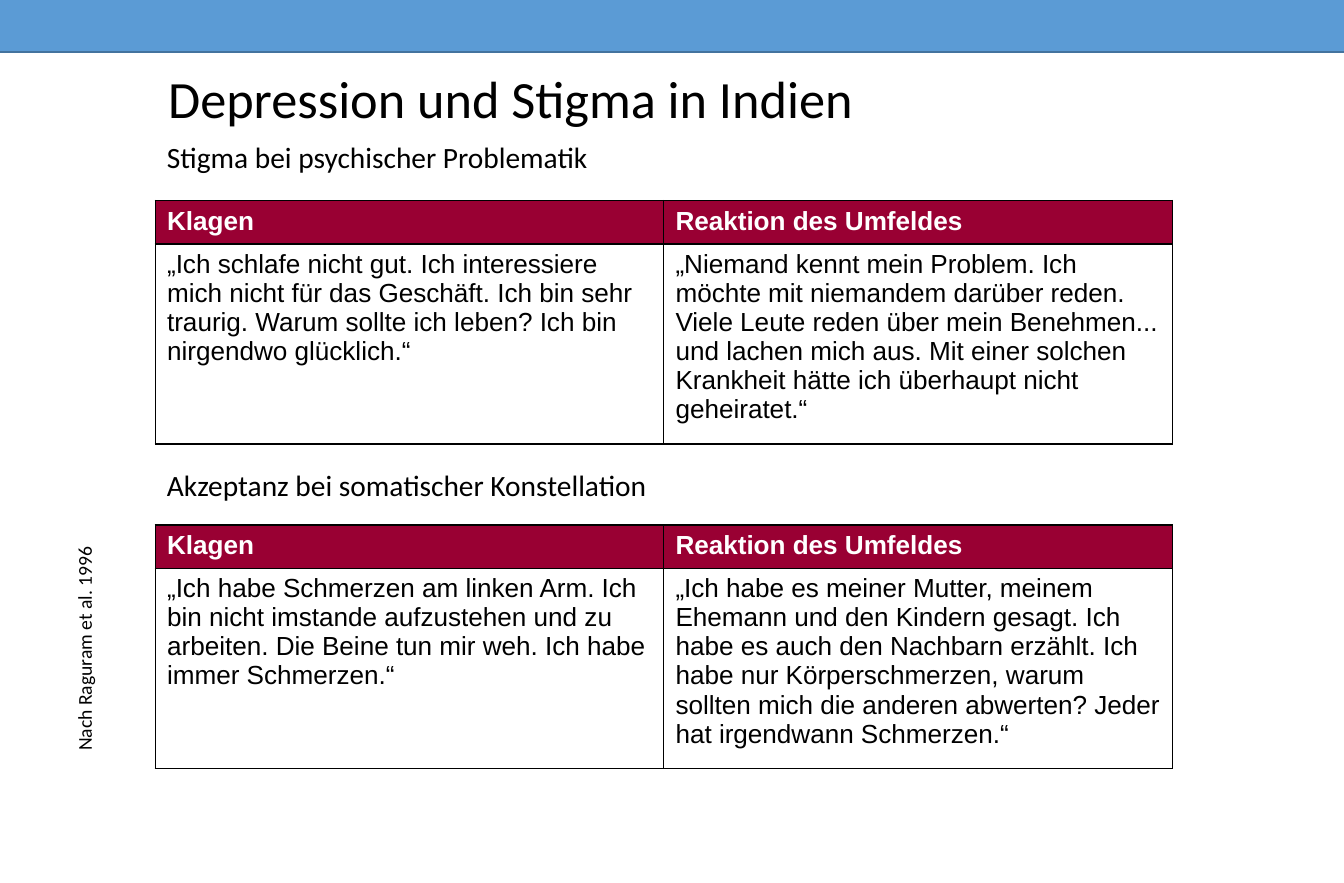
from lxml.etree import SubElement
from pptx import Presentation
from pptx.dml.color import RGBColor
from pptx.enum.shapes import MSO_SHAPE
from pptx.enum.text import MSO_ANCHOR
from pptx.oxml.ns import qn
from pptx.util import Inches, Pt

SLIDE_WIDTH = Inches(11.42)
SLIDE_HEIGHT = Inches(7.5)
BLACK = RGBColor(0x00, 0x00, 0x00)
WHITE = RGBColor(0xFF, 0xFF, 0xFF)
BAND_BLUE = RGBColor(0x5B, 0x9B, 0xD5)
BAND_EDGE = RGBColor(0x43, 0x73, 0x9E)
HEADER_RED = RGBColor(0x99, 0x00, 0x33)

CONTENT_LEFT = 11.56
TABLE_WIDTH = 75.66
HEADING_WIDTH = 67.34
HEADING_HEIGHT = 7.33
ROW_HEIGHTS = (4.6, 21.1)
HEADERS = ("Klagen", "Reaktion des Umfeldes")

SECTIONS = (
    (
        "Stigma bei psychischer Problematik", 15.07, 22.72,
        (
            "„Ich schlafe nicht gut. Ich interessiere mich nicht für das Geschäft. "
            "Ich bin sehr traurig. Warum sollte ich leben? Ich bin nirgendwo glücklich.“",
            "„Niemand kennt mein Problem. Ich möchte mit niemandem darüber reden. "
            "Viele Leute reden über mein Benehmen... und lachen mich aus. Mit einer "
            "solchen Krankheit hätte ich überhaupt nicht geheiratet.“",
        ),
    ),
    (
        "Akzeptanz bei somatischer Konstellation", 52.27, 59.47,
        (
            "„Ich habe Schmerzen am linken Arm. Ich bin nicht imstande aufzustehen "
            "und zu arbeiten. Die Beine tun mir weh. Ich habe immer Schmerzen.“",
            "„Ich habe es meiner Mutter, meinem Ehemann und den Kindern gesagt. Ich "
            "habe es auch den Nachbarn erzählt. Ich habe nur Körperschmerzen, warum "
            "sollten mich die anderen abwerten? Jeder hat irgendwann Schmerzen.“",
        ),
    ),
)


def across(percent):
    return round(SLIDE_WIDTH * percent / 100)


def down(percent):
    return round(SLIDE_HEIGHT * percent / 100)


def area(left, top, width, height):
    return across(left), down(top), across(width), down(height)


def format_text(text_frame, font_name, size, color, bold=False):
    for paragraph in text_frame.paragraphs:
        for run in paragraph.runs:
            run.font.name = font_name
            run.font.size = Pt(size)
            run.font.color.rgb = color
            run.font.bold = bold


def add_band(slide):
    band = slide.shapes.add_shape(
        MSO_SHAPE.RECTANGLE, *area(-3.15, -1.87, 107.62, 7.73)
    )
    band.shadow.inherit = False
    band.fill.solid()
    band.fill.fore_color.rgb = BAND_BLUE
    band.line.color.rgb = BAND_EDGE
    band.line.width = Pt(1)


def add_label(slide, text, position, size):
    label = slide.shapes.add_textbox(*position)
    label.text_frame.word_wrap = True
    label.text_frame.text = text
    format_text(label.text_frame, "Calibri", size, BLACK)
    return label


def add_borders(cell):
    properties = cell._tc.get_or_add_tcPr()
    for side in ("a:lnL", "a:lnR", "a:lnT", "a:lnB"):
        line = SubElement(properties, qn(side), w=str(Pt(1)))
        fill = SubElement(line, qn("a:solidFill"))
        SubElement(fill, qn("a:srgbClr"), val=str(BLACK))


def fill_cell(cell, text, background, color, bold):
    add_borders(cell)
    cell.fill.solid()
    cell.fill.fore_color.rgb = background
    cell.text_frame.text = text
    format_text(cell.text_frame, "Arial", 16, color, bold)


def add_statement_table(slide, top, statements):
    position = area(CONTENT_LEFT, top, TABLE_WIDTH, sum(ROW_HEIGHTS))
    table = slide.shapes.add_table(2, len(HEADERS), *position).table
    table.horz_banding = False
    for row, height in zip(table.rows, ROW_HEIGHTS):
        row.height = down(height)
    for column, (header, statement) in enumerate(zip(HEADERS, statements)):
        fill_cell(table.cell(0, column), header, HEADER_RED, WHITE, True)
        fill_cell(table.cell(1, column), statement, WHITE, BLACK, False)


def main():
    presentation = Presentation()
    presentation.slide_width = SLIDE_WIDTH
    presentation.slide_height = SLIDE_HEIGHT
    slide = presentation.slides.add_slide(presentation.slide_layouts[6])

    add_band(slide)
    title = add_label(
        slide, "Depression und Stigma in Indien", area(11.65, 6.67, 84.76, 9.73), 32
    )
    title.text_frame.vertical_anchor = MSO_ANCHOR.MIDDLE
    title.text_frame.paragraphs[0].line_spacing = 0.9

    for heading, heading_top, table_top, statements in SECTIONS:
        position = area(CONTENT_LEFT, heading_top, HEADING_WIDTH, HEADING_HEIGHT)
        add_label(slide, heading, position, 18)
        add_statement_table(slide, table_top, statements)

    credit = add_label(
        slide, "Nach Raguram et al. 1996", area(-12.35, 56, 37.22, 4), 12
    )
    credit.rotation = 270

    presentation.save("out.pptx")


if __name__ == "__main__":
    main()
